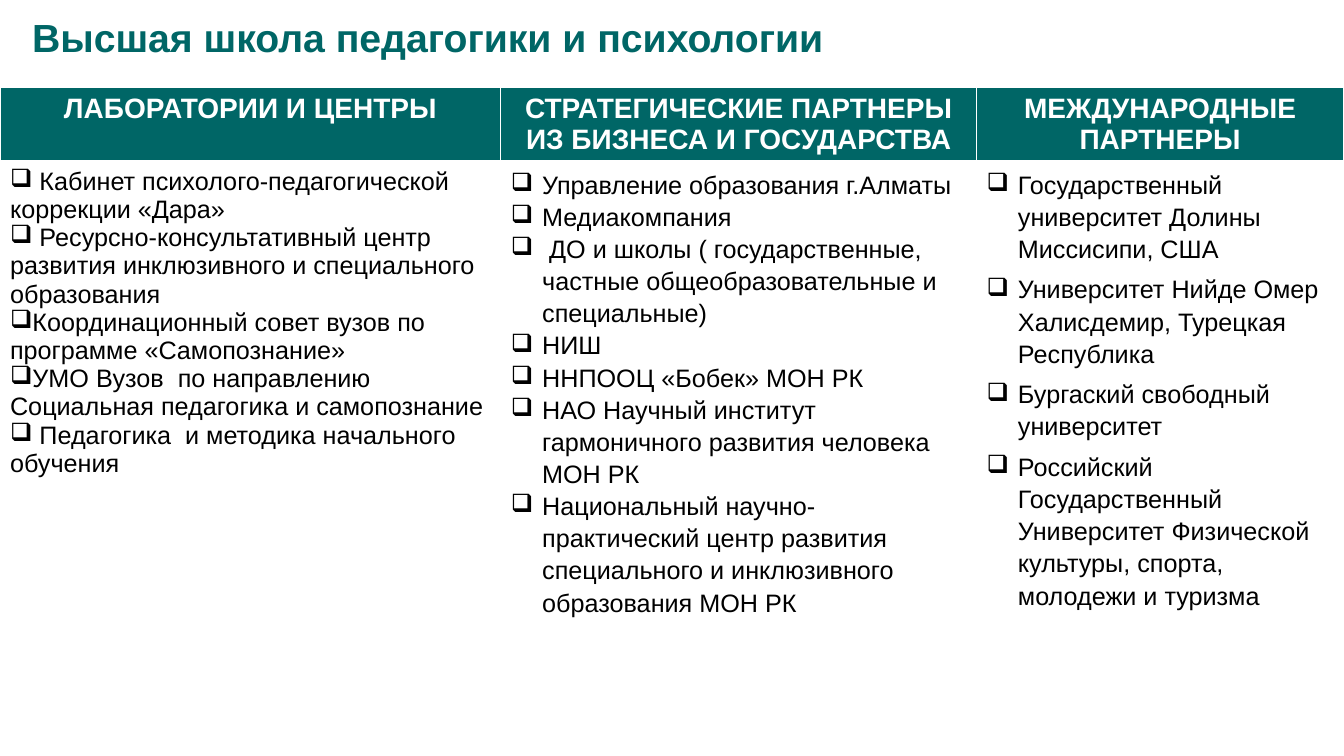
from lxml import etree
from pptx import Presentation
from pptx import util as u
from pptx.dml import color
from pptx.enum import text
from pptx.oxml import ns

TEAL, WHITE, BLACK = "006666", "FFFFFF", "000000"

TITLE = "Высшая школа педагогики и психологии"
# Each column: heading, width in cm, paragraph style, items
COLUMNS = [
    ("ЛАБОРАТОРИИ И ЦЕНТРЫ", 12.62, {"left": 0, "hanging": 0.61}, [
        " Кабинет психолого-педагогической коррекции «Дара»",
        " Ресурсно-консультативный центр развития инклюзивного и специального образования",
        "Координационный совет вузов по программе «Самопознание»",
        "УМО Вузов  по направлению Социальная педагогика и самопознание",
        " Педагогика  и методика начального обучения",
    ]),
    ("СТРАТЕГИЧЕСКИЕ ПАРТНЕРЫ ИЗ БИЗНЕСА И ГОСУДАРСТВА", 11.99,
     {"left": 0.79, "hanging": 0.79, "spacing": 1.14}, [
        "Управление образования г.Алматы",
        "Медиакомпания",
        " ДО и школы ( государственные, частные общеобразовательные и специальные)",
        "НИШ",
        "ННПООЦ «Бoбек» МОН РК",
        "НАО Научный институт гармоничного развития человека МОН РК",
        "Национальный научно-практический центр развития специального и "
        "инклюзивного образования МОН РК",
     ]),
    ("МЕЖДУНАРОДНЫЕ ПАРТНЕРЫ", 9.25,
     {"left": 0.79, "hanging": 0.79, "spacing": 1.14, "before": 6}, [
        "Государственный университет Долины Миссисипи, США",
        "Университет Нийде Омер Халисдемир, Турецкая Республика",
        "Бургаский свободный университет",
        "Российский Государственный Университет Физической культуры, спорта, "
        "молодежи и туризма",
     ]),
]


def rgb(value):
    return color.RGBColor.from_string(value)


class SlideBuilder:
    font_name = "Arial"
    bullet = "❑"

    def __init__(self, slide):
        self.slide = slide

    def run(self, paragraph, words, size, fill, bold=False):
        run = paragraph.add_run()
        run.text = words
        run.font.name = self.font_name
        run.font.size = u.Pt(size)
        run.font.bold = bold
        run.font.color.rgb = rgb(fill)

    def title(self, words, left, top, width, height):
        shape = self.slide.shapes.add_textbox(*map(u.Cm, (left, top, width, height)))
        frame = shape.text_frame
        frame.word_wrap = True
        frame.vertical_anchor = text.MSO_ANCHOR.MIDDLE
        paragraph = frame.paragraphs[0]
        paragraph.line_spacing = 0.9
        self.run(paragraph, words, 28, TEAL, bold=True)

    def cell_style(self, cell, fill, borders):
        properties = cell._tc.get_or_add_tcPr()
        for side, points in borders.items():
            line = etree.SubElement(properties, ns.qn(f"a:ln{side}"), w=str(u.Pt(points)))
            solid = etree.SubElement(line, ns.qn("a:solidFill"))
            etree.SubElement(solid, ns.qn("a:srgbClr"), val=WHITE)
        cell.fill.solid()
        cell.fill.fore_color.rgb = rgb(fill)

    def bullet_list(self, frame, items, left, hanging, spacing=None, before=0):
        for index, item in enumerate(items):
            paragraph = frame.add_paragraph() if index else frame.paragraphs[0]
            properties = paragraph._p.get_or_add_pPr()
            properties.set("marL", str(u.Cm(left)))
            properties.set("indent", str(-u.Cm(hanging)))
            etree.SubElement(properties, ns.qn("a:buChar"), char=self.bullet)
            if spacing:
                paragraph.line_spacing = spacing
            if index and before:
                paragraph.space_before = u.Pt(before)
            self.run(paragraph, item, 18, BLACK)

    def table(self, columns, left, top, row_heights):
        width = sum(column[1] for column in columns)
        table = self.slide.shapes.add_table(
            len(row_heights), len(columns),
            *map(u.Cm, (left, top, width, sum(row_heights)))).table
        for row, height in zip(table.rows, row_heights):
            row.height = u.Cm(height)
        for index, (heading, column_width, style, items) in enumerate(columns):
            table.columns[index].width = u.Cm(column_width)
            # Heading cell
            head = table.cell(0, index)
            self.cell_style(head, TEAL, {"L": 1, "R": 1, "T": 1, "B": 3})
            paragraph = head.text_frame.paragraphs[0]
            paragraph.alignment = text.PP_ALIGN.CENTER
            self.run(paragraph, heading, 20, WHITE, bold=True)
            # List cell
            body = table.cell(1, index)
            self.cell_style(body, WHITE, {"L": 1, "R": 1, "T": 1, "B": 1})
            self.bullet_list(body.text_frame, items, **style)


def main():
    presentation = Presentation()
    presentation.slide_width = u.Cm(33.87)
    presentation.slide_height = u.Cm(19.05)
    builder = SlideBuilder(presentation.slides.add_slide(presentation.slide_layouts[6]))
    # Table of laboratories and partners
    builder.table(COLUMNS, 0, 2.21, [1.88, 14.33])
    # Slide title
    builder.title(TITLE, 0.56, 0.03, 33.31, 1.96)
    presentation.save("out.pptx")


if __name__ == "__main__":
    main()
